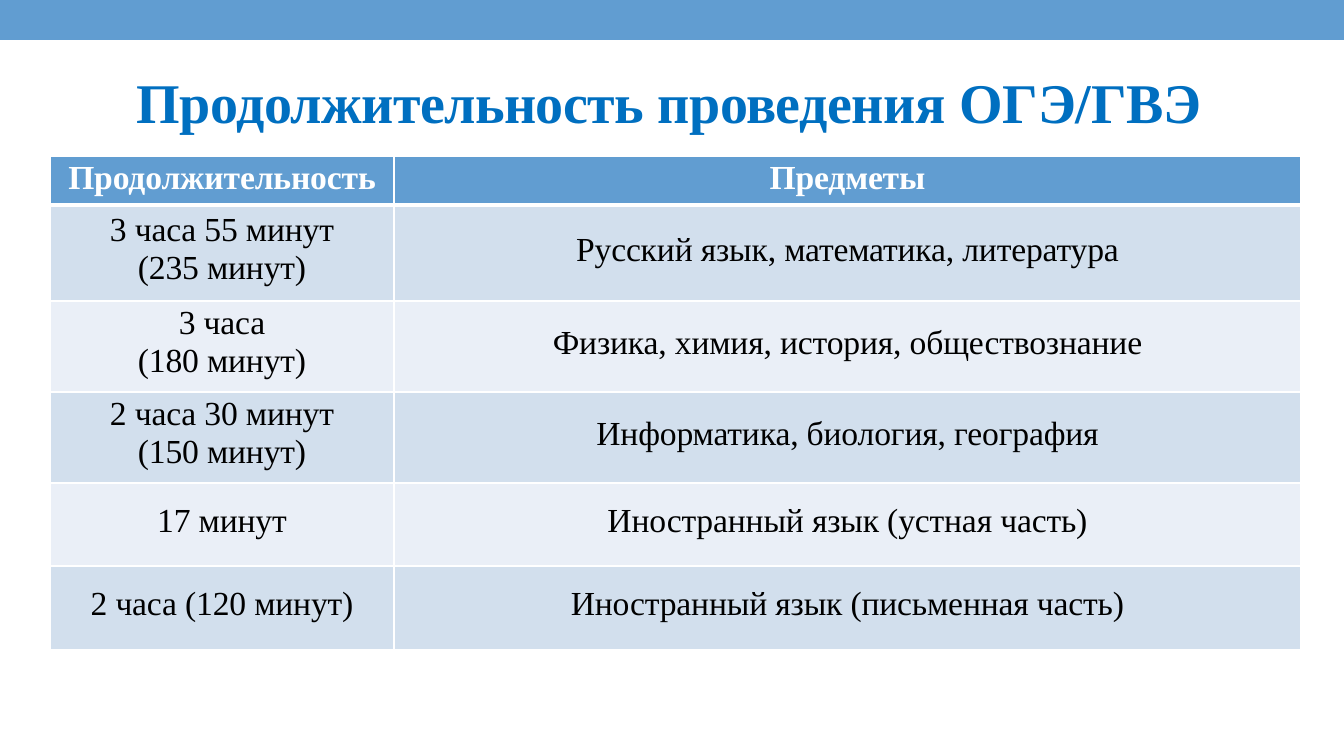
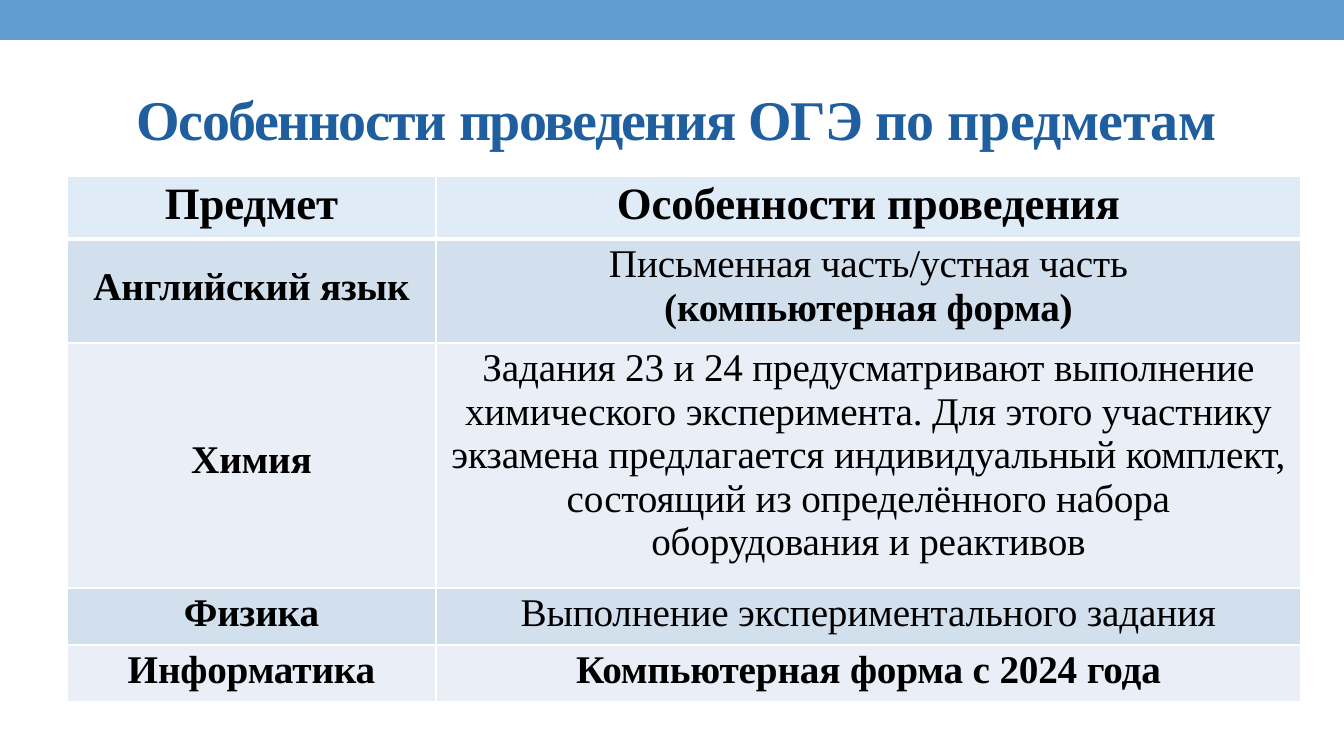
from collections import namedtuple
from dataclasses import dataclass

from lxml.etree import SubElement
from pptx import Presentation
from pptx.dml.color import RGBColor
from pptx.enum.shapes import MSO_SHAPE
from pptx.enum.text import MSO_ANCHOR, PP_ALIGN
from pptx.oxml.ns import qn
from pptx.util import Pt

SCALE = 914400 / 100.8

Box = namedtuple("Box", "x y w h")
Line = namedtuple("Line", "text bold", defaults=(False,))
Cell = namedtuple("Cell", "top lines")
Row = namedtuple("Row", "height cells")
Look = namedtuple("Look", "head_fill head_color head_size body_size")


@dataclass(frozen=True)
class Theme:
    """Colours, type sizes and line widths of the deck."""
    font: str = "Times New Roman"
    band: str = "619DD1"
    white: str = "FFFFFF"
    black: str = "000000"
    pale_head: str = "DFEBF6"
    stripes: tuple = ("D2DFED", "EAEFF7")
    title_bright: str = "006FC0"
    title_deep: str = "1F5F9F"
    title_size: int = 40
    tracking: float = -0.1
    rule: int = 1
    head_rule: int = 3


THEME = Theme()
SLIDE = Box(0, 0, 1344, 756)
BAND = Box(0, 0, 1344, 40)

DURATION_ROWS = [
    Row(49, [Cell(4, [Line("Продолжительность", True)]),
             Cell(4, [Line("Предметы", True)])]),
    Row(96, [Cell(7, [Line("3 часа 55 минут"), Line("(235 минут)")]),
             Cell(27, [Line("Русский язык, математика, литература")])]),
    Row(91, [Cell(4, [Line("3 часа"), Line("(180 минут)")]),
             Cell(24, [Line("Физика, химия, история, обществознание")])]),
    Row(91, [Cell(4, [Line("2 часа 30 минут"), Line("(150 минут)")]),
             Cell(24, [Line("Информатика, биология, география")])]),
    Row(83, [Cell(20, [Line("17 минут")]),
             Cell(20, [Line("Иностранный язык (устная часть)")])]),
    Row(84, [Cell(20, [Line("2 часа (120 минут)")]),
             Cell(20, [Line("Иностранный язык (письменная часть)")])]),
]

SUBJECT_ROWS = [
    Row(63, [Cell(4, [Line("Предмет", True)]),
             Cell(4, [Line("Особенности проведения", True)])]),
    Row(104, [Cell(27, [Line("Английский язык", True)]),
              Cell(4, [Line("Письменная часть/устная часть"),
                       Line("(компьютерная форма)", True)])]),
    Row(245, [Cell(96, [Line("Химия", True)]),
              Cell(4, [Line("Задания 23 и 24 предусматривают выполнение "
                            "химического эксперимента. Для этого участнику"),
                       Line("экзамена предлагается индивидуальный комплект, "
                            "состоящий из определённого набора"),
                       Line("оборудования и реактивов")])]),
    Row(57, [Cell(4, [Line("Физика", True)]),
             Cell(4, [Line("Выполнение экспериментального задания")])]),
    Row(57, [Cell(4, [Line("Информатика", True)]),
             Cell(4, [Line("Компьютерная форма с 2024 года", True)])]),
]


def px(n):
    """Turn px into EMU."""
    return round(n * SCALE)


def put(obj, values):
    """Set each attribute named in a dict."""
    for name, value in values.items():
        setattr(obj, name, value)


def paint(fill, color):
    """Give a fill one solid colour."""
    fill.solid()
    fill.fore_color.rgb = RGBColor.from_string(color)


def add_run(p, text, size, color, bold, tracking):
    """Append a formatted run to a paragraph."""
    r = p.add_run()
    r.text = text
    put(r.font, {"name": THEME.font, "size": Pt(size), "bold": bold})
    r.font.color.rgb = RGBColor.from_string(color)
    r.font._element.set("spc", str(round(tracking * 100)))


def add_band(s, box):
    """Draw the band along the top of a slide."""
    sp = s.shapes.add_shape(MSO_SHAPE.RECTANGLE, *map(px, box))
    sp.shadow.inherit = False
    paint(sp.fill, THEME.band)
    sp.line.fill.background()


def add_title(s, box, color, runs):
    """Write the title from runs of text and tracking."""
    tf = s.shapes.add_textbox(*map(px, box)).text_frame
    put(tf, {"word_wrap": True, "margin_left": 0, "margin_top": 0,
             "margin_right": 0, "margin_bottom": 0,
             "vertical_anchor": MSO_ANCHOR.TOP})
    for text, tracking in runs:
        add_run(tf.paragraphs[0], text, THEME.title_size, color, True, tracking)


def add_borders(cell, top, bottom):
    """Draw white rules on the four sides of a cell."""
    widths = {"L": THEME.rule, "R": THEME.rule, "T": top, "B": bottom}
    for side, width in widths.items():
        ln = SubElement(cell._tc.get_or_add_tcPr(), qn(f"a:ln{side}"), w=str(Pt(width)))
        fill = SubElement(ln, qn("a:solidFill"))
        SubElement(fill, qn("a:srgbClr"), val=THEME.white)


def fill_cell(cell, content, row, look):
    """Set the rules, fill and centred lines of a cell."""
    head = row == 0
    add_borders(cell, THEME.head_rule if row == 1 else THEME.rule,
                THEME.head_rule if head else THEME.rule)
    paint(cell.fill, look.head_fill if head else THEME.stripes[(row - 1) % 2])
    put(cell, {"margin_left": 0, "margin_right": 0, "margin_bottom": 0,
               "margin_top": px(content.top), "vertical_anchor": MSO_ANCHOR.TOP})
    size = look.head_size if head else look.body_size
    color = look.head_color if head else THEME.black
    tf = cell.text_frame
    for i, line in enumerate(content.lines):
        p = tf.add_paragraph() if i else tf.paragraphs[0]
        p.alignment = PP_ALIGN.CENTER
        add_run(p, line.text, size, color, line.bold, THEME.tracking)


def add_grid(s, x, y, widths, rows, look):
    """Place a table whose size follows from its columns and rows."""
    box = Box(x, y, sum(widths), sum(row.height for row in rows))
    table = s.shapes.add_table(len(rows), len(widths), *map(px, box)).table
    table.horz_banding = False
    for column, width in zip(table.columns, widths):
        column.width = px(width)
    for i, row in enumerate(rows):
        table.rows[i].height = px(row.height)
        for j, content in enumerate(row.cells):
            fill_cell(table.cell(i, j), content, i, look)


def add_table_slide(prs, title, grid):
    """Build a slide with a band, a title and a table."""
    s = prs.slides.add_slide(prs.slide_layouts[6])
    add_band(s, BAND)
    add_title(s, **title)
    add_grid(s, **grid)


def main():
    """Build and save the deck."""
    prs = Presentation()
    put(prs, {"slide_width": px(SLIDE.w), "slide_height": px(SLIDE.h)})
    add_table_slide(
        prs,
        {"box": Box(137, 68, 1140, 66), "color": THEME.title_bright,
         "runs": [("Продолжительность ", -0.4), ("проведения ", -0.3),
                  ("ОГЭ/ГВЭ", -0.1)]},
        {"x": 50, "y": 156, "widths": (344, 907), "rows": DURATION_ROWS,
         "look": Look(THEME.band, THEME.white, 24, 24)})
    add_table_slide(
        prs,
        {"box": Box(137, 84, 1140, 66), "color": THEME.title_deep,
         "runs": [("Особенности ", -1.1), ("проведения ", -1.2), ("ОГЭ ", -1),
                  ("по ", -0.7), ("предметам", -0.4)]},
        {"x": 67, "y": 176, "widths": (369, 865), "rows": SUBJECT_ROWS,
         "look": Look(THEME.pale_head, THEME.black, 32, 28)})
    prs.save("out.pptx")


if __name__ == "__main__":
    main()
